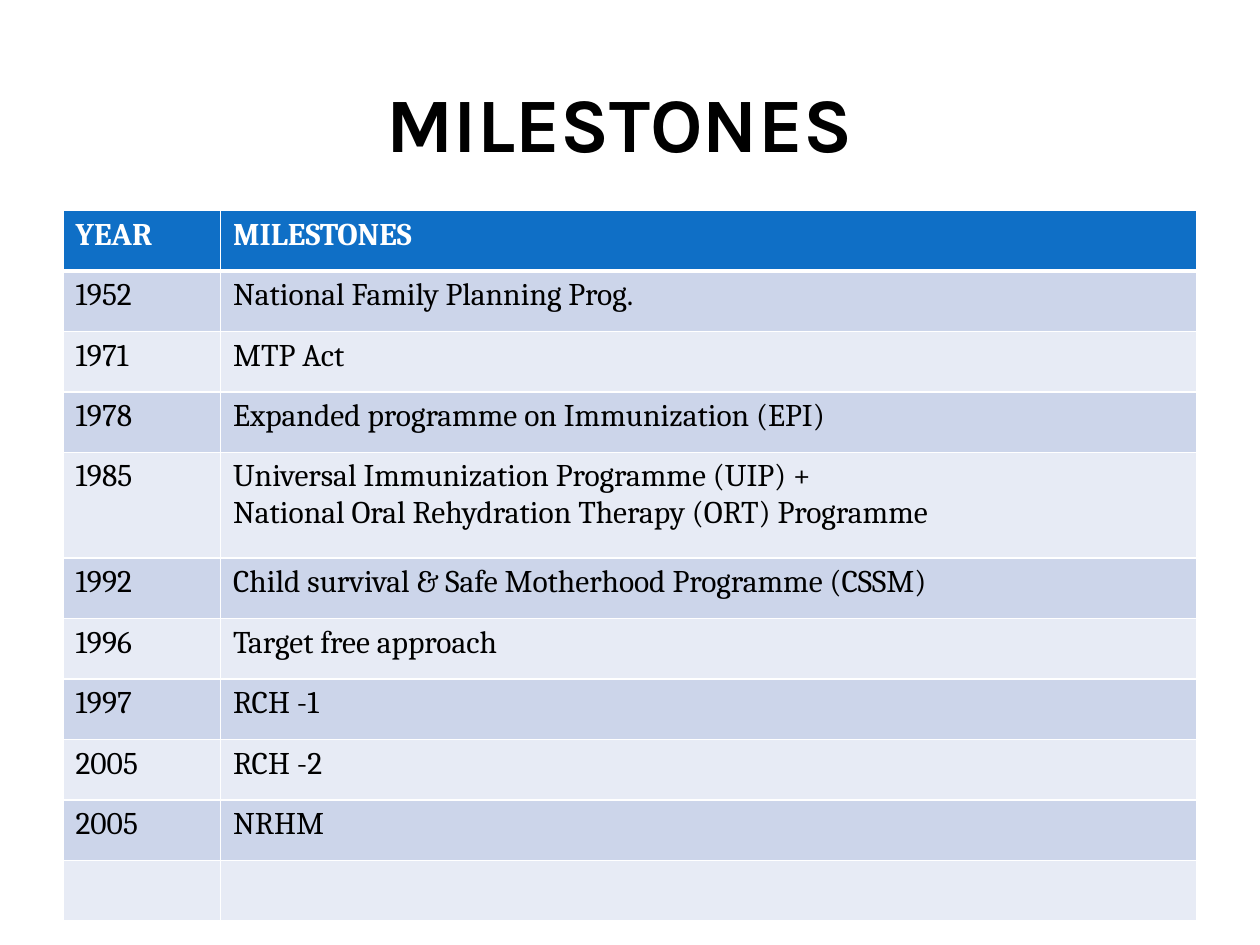
import pptx
import pptx.dml.color
import pptx.enum.text
import pptx.oxml
import pptx.oxml.ns
import pptx.util

Inches = pptx.util.Inches
Pt = pptx.util.Pt

COLORS = {"header": "0F6FC6", "odd": "CCD5EA", "even": "E7EBF5",
          "white": "FFFFFF", "black": "000000"}

MILESTONES = [
    ("YEAR", "MILESTONES"),
    ("1952", "National Family Planning Prog."),
    ("1971", "MTP Act"),
    ("1978", "Expanded programme on Immunization (EPI)"),
    ("1985", "Universal Immunization Programme (UIP) +\n"
             "National Oral Rehydration Therapy (ORT) Programme"),
    ("1992", "Child survival & Safe Motherhood Programme (CSSM)"),
    ("1996", "Target free approach"),
    ("1997", "RCH -1"),
    ("2005", "RCH -2"),
    ("2005", "NRHM"),
    ("", ""),
]


class SlideBuilder:
    """Holds the style and the current slide, and adds elements to it."""

    def __init__(self, slide):
        self.slide = slide
        self.title_font = "Karla"
        self.body_font = "Cambria"

    def color(self, name):
        return pptx.dml.color.RGBColor.from_string(COLORS[name])

    def format_font(self, font, name, size, color, bold):
        font.name = name
        font.size = Pt(size)
        font.bold = bold
        font.color.rgb = self.color(color)

    def title(self, text, left, top, width, height):
        box = self.slide.shapes.title
        box.left, box.top = Inches(left), Inches(top)
        box.width, box.height = Inches(width), Inches(height)
        frame = box.text_frame
        frame.text = text
        frame.word_wrap = True
        frame.vertical_anchor = pptx.enum.text.MSO_ANCHOR.BOTTOM
        frame.margin_left = frame.margin_right = frame.margin_bottom = 0
        frame.margin_top = Inches(0.05)
        para = frame.paragraphs[0]
        para.alignment = pptx.enum.text.PP_ALIGN.CENTER
        self.format_font(para.runs[0].font, self.title_font, 44, "black", True)

    def borders(self, cell, widths):
        properties = cell._tc.get_or_add_tcPr()
        for index, (side, width) in enumerate(widths.items()):
            line = pptx.oxml.parse_xml(
                f'<a:{side} {pptx.oxml.ns.nsdecls("a")} w="{Pt(width)}">'
                f'<a:solidFill><a:srgbClr val="{COLORS["white"]}"/></a:solidFill>'
                f'</a:{side}>')
            properties.insert(index, line)

    def cell(self, cell, text, row):
        header = row == 0
        fill = "header" if header else "odd" if row % 2 else "even"
        cell.fill.solid()
        cell.fill.fore_color.rgb = self.color(fill)
        self.borders(cell, {"lnL": 1, "lnR": 1, "lnT": 3 if row == 1 else 1,
                            "lnB": 3 if header else 1})
        cell.text_frame.text = text
        for para in cell.text_frame.paragraphs:
            for span in para.runs:
                self.format_font(span.font, self.body_font, 18,
                                 "white" if header else "black", header)

    def table(self, rows, left, top, column_widths, line_height, extra_line):
        heights = [line_height + extra_line * entry.count("\n") for _, entry in rows]
        table = self.slide.shapes.add_table(
            len(rows), len(column_widths), Inches(left), Inches(top),
            Inches(sum(column_widths)), Inches(sum(heights))).table
        for column, width in zip(table.columns, column_widths):
            column.width = Inches(width)
        for index, (values, height) in enumerate(zip(rows, heights)):
            table.rows[index].height = Inches(height)
            for cell, text in zip(table.rows[index].cells, values):
                self.cell(cell, text, index)


def main():
    deck = pptx.Presentation()
    deck.slide_width, deck.slide_height = Inches(10), Inches(7.5)
    page = SlideBuilder(deck.slides.add_slide(deck.slide_layouts[5]))
    page.title("MILESTONES", 0.42, 0.33, 9, 1)
    page.table(MILESTONES, 0.5, 1.67, [1.25, 7.75], 0.48, 0.36)
    deck.save("out.pptx")


if __name__ == "__main__":
    main()
